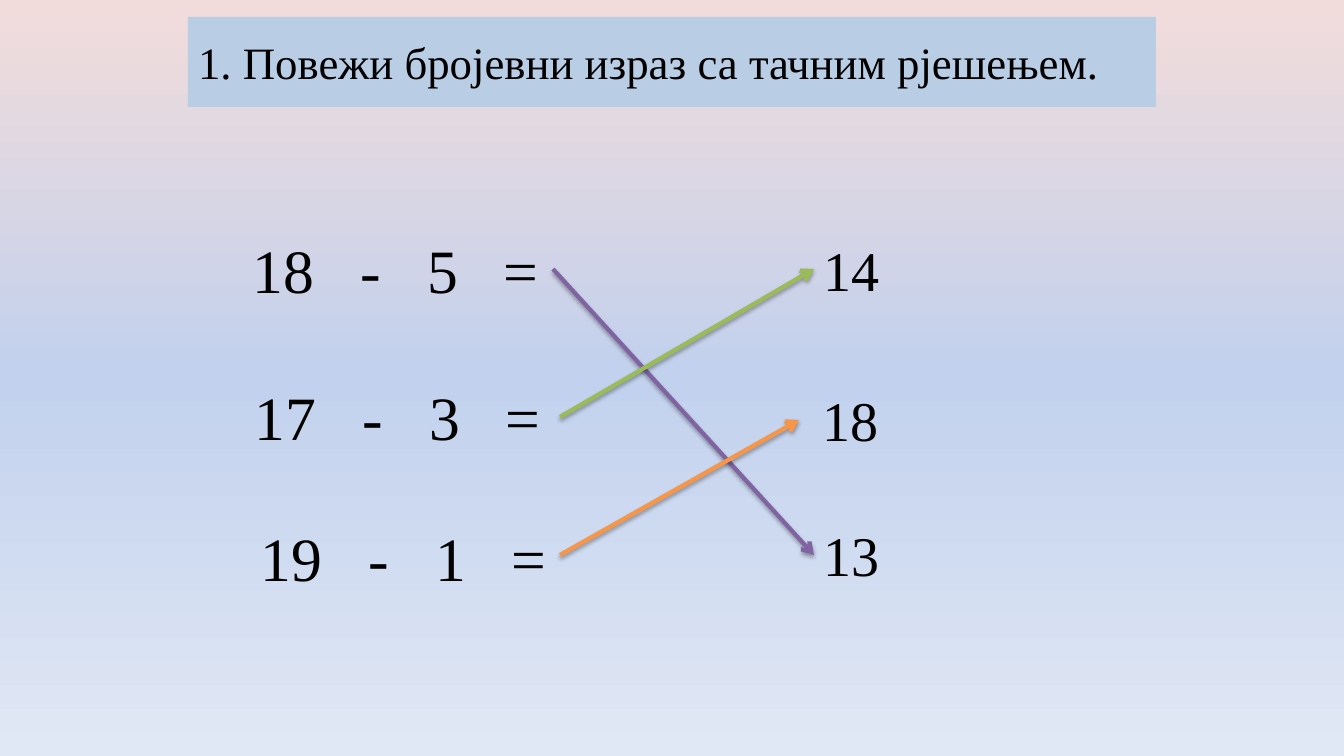
from copy import deepcopy

from pptx import Presentation
from pptx import util as u
from pptx.dml.color import RGBColor
from pptx.enum import shapes, text
from pptx.oxml import parse_xml
from pptx.oxml.ns import nsdecls, qn
from pptx.oxml.xmlchemy import OxmlElement

FONT = "Times New Roman"
BLACK = RGBColor(0x00, 0x00, 0x00)
TITLE_BLUE = RGBColor(0xB9, 0xCD, 0xE5)
PURPLE = RGBColor(0x80, 0x64, 0xA2)
GREEN = RGBColor(0x9B, 0xBB, 0x59)
ORANGE = RGBColor(0xF7, 0x96, 0x46)
BACKGROUND_STOPS = [
    (0, RGBColor(0xF2, 0xDC, 0xDB)),
    (0.5, RGBColor(0xC2, 0xD1, 0xED)),
    (1, RGBColor(0xE1, 0xE8, 0xF5)),
]

TITLE = "1. Повежи бројевни израз са тачним рјешењем."
# Parts of each expression, then left and top in px
EXPRESSIONS = [
    (("18", "-", "5", "="), 243, 227),
    (("17", "-", "3", "="), 245, 374),
    (("19", "-", "1", "="), 251, 515),
]
RESULTS = [("14", 814, 231), ("18", 813, 381), ("13", 814, 516)]
ARROWS = [
    ((553, 269), (814, 555), PURPLE),
    ((560, 417), (814, 269), GREEN),
    ((560, 555), (799, 420), ORANGE),
]
EXPRESSION_TABS = (108, 175, 251)
EXPRESSION_SIZE = (357, 85)
RESULT_SIZE = (111, 78)

SHADOW = f"""<a:effectLst {nsdecls("a")}>
  <a:outerShdw blurRad="39370" dist="22860" dir="5400000" rotWithShape="0">
    <a:srgbClr val="000000"><a:alpha val="35000"/></a:srgbClr>
  </a:outerShdw>
</a:effectLst>"""


def px(length):
    return u.Emu(round(length * 914400 / 100.8))


def paint_background(slide):
    fill = slide.background.fill
    fill.gradient()
    fill.gradient_angle = 270
    stop_list = next(slide.element.iter(qn("a:gsLst")))
    stop_list.append(deepcopy(stop_list[-1]))
    for stop, (position, color) in zip(fill.gradient_stops, BACKGROUND_STOPS):
        stop.position = position
        stop.color.rgb = color


def write(shape, content, size):
    frame = shape.text_frame
    frame.word_wrap = True
    frame.text = content
    paragraph = frame.paragraphs[0]
    paragraph.alignment = text.PP_ALIGN.LEFT
    for run in paragraph.runs:
        run.font.name = FONT
        run.font.size = u.Pt(size)
        run.font.color.rgb = BLACK
    return paragraph


def add_title(slide):
    title = slide.shapes.title
    title.left, title.top, title.width, title.height = map(px, (188, 17, 968, 90))
    title.fill.solid()
    title.fill.fore_color.rgb = TITLE_BLUE
    write(title, TITLE, 32)
    title.text_frame.vertical_anchor = text.MSO_ANCHOR.MIDDLE


def add_text(slide, content, left, top, box_size, font_size):
    box = slide.shapes.add_textbox(*map(px, (left, top, *box_size)))
    return write(box, content, font_size)


def set_tab_stops(paragraph, positions):
    properties = paragraph._p.get_or_add_pPr()
    tab_list = OxmlElement("a:tabLst")
    for position in positions:
        tab = OxmlElement("a:tab")
        tab.set("pos", str(px(position)))
        tab.set("algn", "l")
        tab_list.append(tab)
    properties.append(tab_list)


def add_arrow(slide, start, end, color):
    arrow = slide.shapes.add_connector(
        shapes.MSO_CONNECTOR.STRAIGHT, *map(px, (*start, *end))
    )
    arrow.line.color.rgb = color
    arrow.line.width = u.Pt(3)
    head = OxmlElement("a:tailEnd")
    head.set("type", "arrow")
    arrow.line._get_or_add_ln().append(head)
    arrow._element.spPr.append(parse_xml(SHADOW))


def main():
    presentation = Presentation()
    presentation.slide_width = px(1344)
    presentation.slide_height = px(756)
    slide = presentation.slides.add_slide(presentation.slide_layouts[5])
    paint_background(slide)
    add_title(slide)
    for parts, left, top in EXPRESSIONS:
        paragraph = add_text(slide, "\t".join(parts), left, top, EXPRESSION_SIZE, 44)
        set_tab_stops(paragraph, EXPRESSION_TABS)
    for result, left, top in RESULTS:
        add_text(slide, result, left, top, RESULT_SIZE, 40)
    for start, end, color in ARROWS:
        add_arrow(slide, start, end, color)
    presentation.save("out.pptx")


if __name__ == "__main__":
    main()
